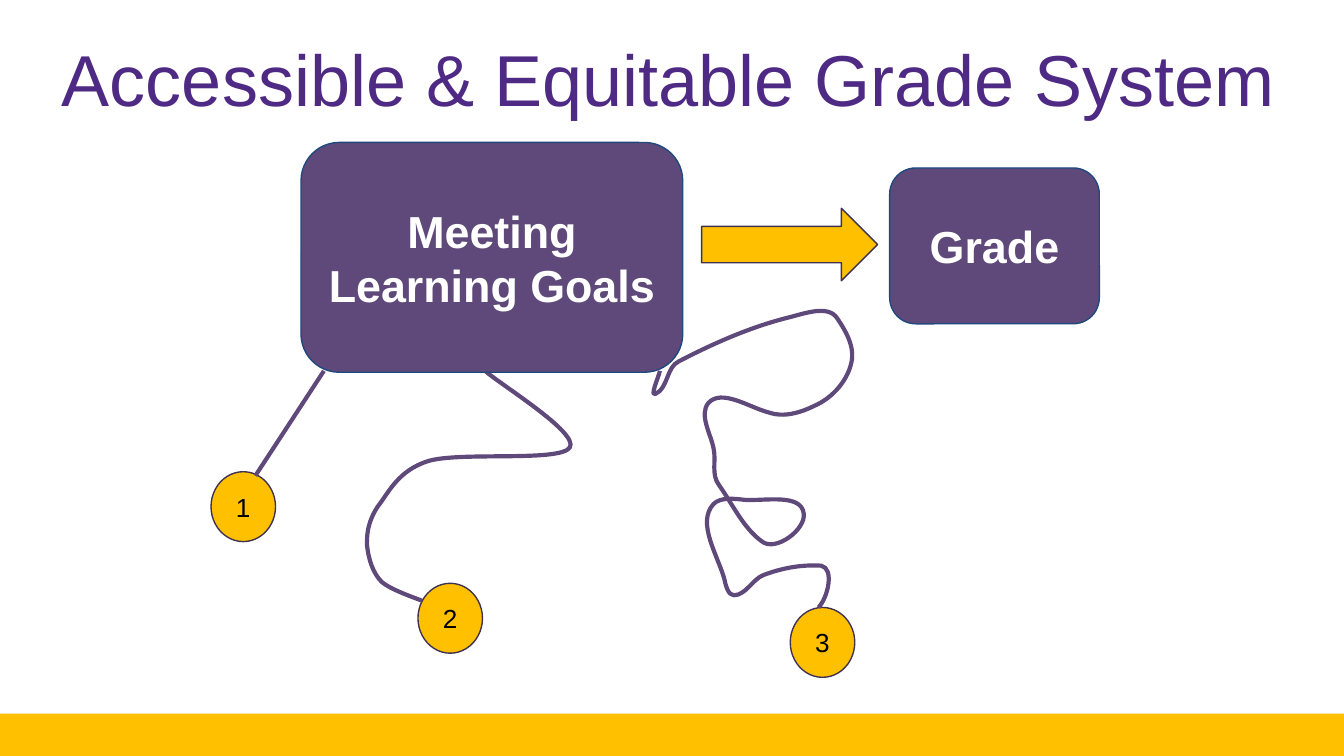
from lxml import etree
from pptx import Presentation
from pptx.dml.color import RGBColor
from pptx.enum.shapes import MSO_CONNECTOR, MSO_SHAPE
from pptx.enum.text import MSO_ANCHOR, PP_ALIGN
from pptx.oxml.ns import qn
from pptx.util import Pt

PX = 9144  # 100 px to the inch
GOLD, PURPLE, DARK, NAVY = "FFC000", "5F497A", "3F3151", "1F497D"


def color(hex_string):
    return RGBColor.from_string(hex_string)


def add_block(kind, box, fill, outline=None, text="", size=14, text_color="000000", bold=False):
    """Add a filled preset shape with centred text; box is in px."""
    shape = slide.shapes.add_shape(kind, *[value * PX for value in box])
    shape.shadow.inherit = False
    shape.fill.solid()
    shape.fill.fore_color.rgb = color(fill)
    if outline:
        shape.line.color.rgb = color(outline)
        shape.line.width = Pt(0.75)
    else:
        shape.line.fill.background()
    if text:
        text_frame = shape.text_frame
        text_frame.text = text
        text_frame.word_wrap = True
        text_frame.vertical_anchor = MSO_ANCHOR.MIDDLE
        text_frame.margin_left = text_frame.margin_right = 10 * PX
        text_frame.margin_top = text_frame.margin_bottom = 10 * PX
        paragraph = text_frame.paragraphs[0]
        paragraph.alignment = PP_ALIGN.CENTER
        font = paragraph.runs[0].font
        font.name, font.size, font.bold = "Arial", Pt(size), bold
        font.color.rgb = color(text_color)


presentation = Presentation()
presentation.slide_width = 1000 * PX
presentation.slide_height = presentation.slide_width * 9 // 16
slide = presentation.slides.add_slide(presentation.slide_layouts[5])

# Title and footer band
title = slide.shapes.title
title.left, title.top, title.width, title.height = [value * PX for value in (36, 3, 941, 109)]
title.text_frame.text = "Accessible & Equitable Grade System"
title.text_frame.word_wrap = True
title.text_frame.vertical_anchor = MSO_ANCHOR.MIDDLE
paragraph = title.text_frame.paragraphs[0]
paragraph.alignment = PP_ALIGN.LEFT
font = paragraph.runs[0].font
font.name, font.size = "Arial", Pt(38.6)
font.color.rgb = color("4E2A84")
add_block(MSO_SHAPE.RECTANGLE, (-3, 531, 1003, 32), GOLD)

# Numbered starting points
for number, (left, top) in enumerate([(157, 351), (311, 434), (588, 452)], start=1):
    add_block(MSO_SHAPE.OVAL, (left, top, 48, 52), GOLD, DARK, str(number))

# Straight route from 1
straight_route = slide.shapes.add_connector(
    MSO_CONNECTOR.STRAIGHT, 190 * PX, 354 * PX, 241 * PX, 276 * PX)
etree.SubElement(straight_route._element.spPr, qn("a:effectLst"))
routes = [straight_route]

# Winding routes from 2 and 3: a start, then three Bezier points per curve
winding_routes = [
    [(314, 447),
     (309, 445), (291, 439), (284, 433),
     (277, 426), (274, 415), (273, 405),
     (273, 396), (274, 388), (281, 377),
     (289, 367), (296, 350), (319, 343),
     (343, 336), (417, 344), (424, 333),
     (431, 322), (372, 286), (361, 276)],
    [(609, 452),
     (616, 445), (621, 423), (611, 421),
     (596, 420), (581, 423), (568, 428),
     (560, 431), (555, 443), (546, 443),
     (542, 443), (540, 436), (539, 431),
     (534, 413), (518, 389), (531, 375),
     (536, 370), (546, 371), (554, 372),
     (569, 373), (596, 367), (598, 382),
     (600, 394), (577, 411), (567, 403),
     (553, 393), (545, 375), (535, 361),
     (529, 353), (533, 343), (531, 334),
     (529, 323), (520, 309), (527, 300),
     (537, 289), (557, 303), (572, 307),
     (583, 311), (596, 307), (606, 302),
     (620, 296), (632, 282), (634, 267),
     (635, 256), (629, 246), (623, 237),
     (616, 226), (597, 234), (584, 237),
     (557, 244), (530, 256), (505, 269),
     (496, 273), (497, 289), (488, 293),
     (483, 296), (490, 281), (491, 276)],
]
for start, *points in winding_routes:
    builder = slide.shapes.build_freeform(*start, scale=float(PX))
    builder.add_line_segments(points, close=False)
    route = builder.convert_to_shape()
    route.shadow.inherit = False
    route.fill.background()
    # Turn every three line segments into one cubic curve
    segments = list(route._element.iter(qn("a:lnTo")))
    for index in range(0, len(segments), 3):
        curve = segments[index]
        curve.tag = qn("a:cubicBezTo")
        for segment in segments[index + 1:index + 3]:
            curve.append(segment[0])
            segment.getparent().remove(segment)
    routes.append(route)

for route in routes:
    route.line.color.rgb = color(PURPLE)
    route.line.width = Pt(2.25)

# Goals lead to the grade
for text, box in [("Meeting Learning Goals", (224, 106, 284, 171)),
                  ("Grade", (662, 125, 156, 116))]:
    add_block(MSO_SHAPE.ROUNDED_RECTANGLE, box, PURPLE, NAVY, text, 24, "FFFFFF", True)
add_block(MSO_SHAPE.RIGHT_ARROW, (522, 155, 131, 54), GOLD, DARK)

presentation.save("out.pptx")
